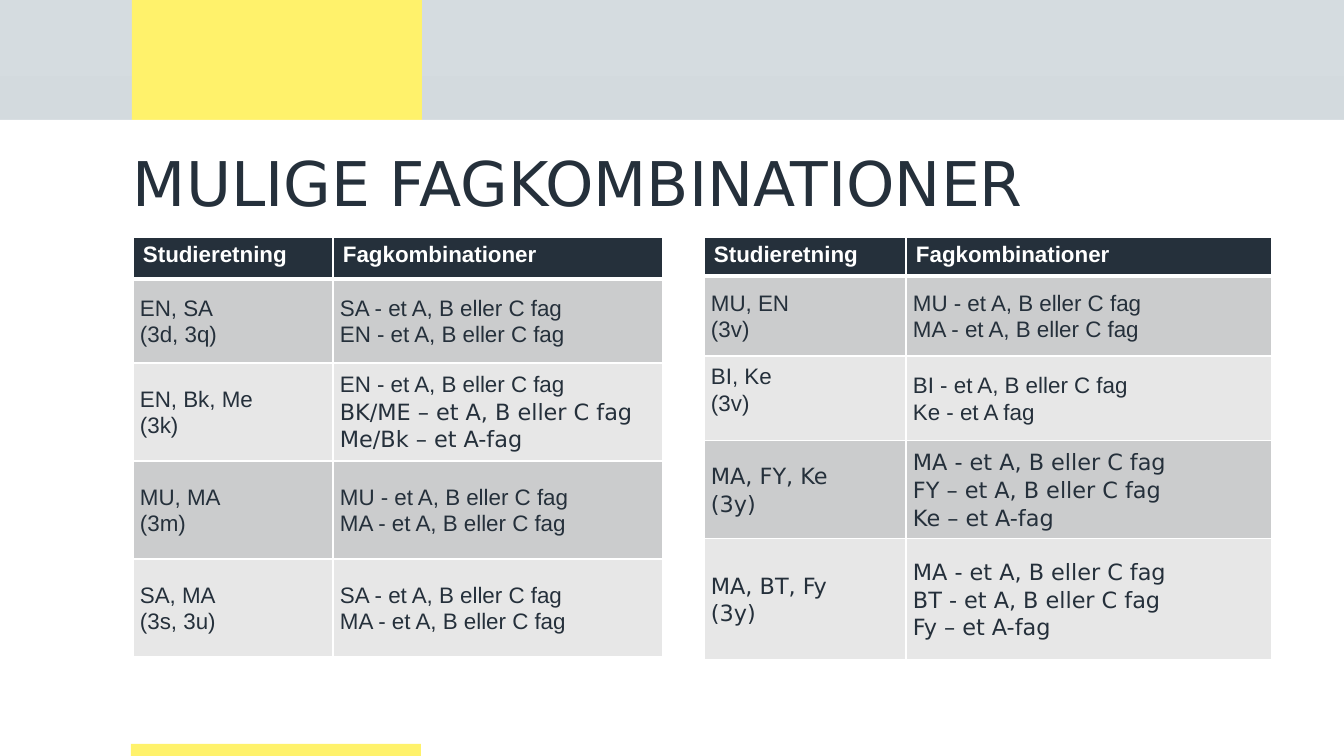
from dataclasses import dataclass

from lxml.etree import SubElement
from pptx import Presentation
from pptx.dml.color import RGBColor
from pptx.enum.shapes import MSO_SHAPE
from pptx.enum.text import MSO_ANCHOR
from pptx.oxml.ns import qn
from pptx.util import Pt

SCALE = 914400 / 100.8


def px(size):
    return round(size * SCALE)


@dataclass(frozen=True)
class Theme:
    dark: str = "25303B"
    white: str = "FFFFFF"
    yellow: str = "FFF26B"
    sky: tuple = ("D5DCE0", "CDD3D7")
    bands: tuple = ("CBCCCD", "E7E7E7")
    sans: str = "Arial"
    wide: str = "DejaVu Sans"
    title: int = 44
    body: int = 16


class Deck:
    def __init__(self, theme):
        self.theme = theme
        self.file = Presentation()
        self.file.slide_width, self.file.slide_height = px(1344), px(756)
        self.slide = self.file.slides.add_slide(self.file.slide_layouts[6])

    def back(self):
        fill = self.slide.background.fill
        fill.gradient()
        fill.gradient_angle = 270
        for stop, color, place in zip(fill.gradient_stops, self.theme.sky, (0, 0.5)):
            stop.color.rgb = RGBColor.from_string(color)
            stop.position = place

    def rect(self, box, color):
        shape = self.slide.shapes.add_shape(MSO_SHAPE.RECTANGLE, *map(px, box))
        shape.shadow.inherit = False
        shape.fill.solid()
        shape.fill.fore_color.rgb = RGBColor.from_string(color)
        shape.line.fill.background()

    def style(self, para, face, size, color, bold=False):
        for run in para.runs:
            run.font.name, run.font.size, run.font.bold = face, Pt(size), bold
            run.font.color.rgb = RGBColor.from_string(color)
        for gap in para._p.findall(qn("a:br")):
            SubElement(gap, qn("a:rPr"), sz=str(size * 100))

    def title(self, box, text):
        frame = self.slide.shapes.add_textbox(*map(px, box)).text_frame
        frame.word_wrap = True
        frame.vertical_anchor = MSO_ANCHOR.BOTTOM
        frame.margin_left = frame.margin_top = 0
        frame.margin_right = frame.margin_bottom = 0
        frame.text = text
        para = frame.paragraphs[0]
        para.line_spacing = 0.85
        self.style(para, self.theme.wide, self.theme.title, self.theme.dark)

    def edge(self, cell, side, width):
        props = cell._tc.get_or_add_tcPr()
        line = SubElement(props, qn(f"a:ln{side}"), w=str(Pt(width)))
        fill = SubElement(line, qn("a:solidFill"))
        SubElement(fill, qn("a:srgbClr"), val=self.theme.white)

    def cell(self, cell, text, faces, band, head, foot):
        """Fill one table cell; faces holds one font per paragraph."""
        theme = self.theme
        for side in "LRTB" if head else "LRB":
            self.edge(cell, side, 3 if head and side == "B" else 1)
        cell.fill.solid()
        cell.fill.fore_color.rgb = RGBColor.from_string(band)
        cell.margin_left = cell.margin_right = px(10 if head else 7)
        cell.margin_top = px(5 if head else 0)
        cell.margin_bottom = px(5 if head else foot)
        cell.vertical_anchor = MSO_ANCHOR.TOP if head else MSO_ANCHOR.MIDDLE
        cell.text_frame.text = text
        for para, face in zip(cell.text_frame.paragraphs, faces):
            if not head:
                para.line_spacing = 1.07
            self.style(para, face, theme.body, theme.white if head else theme.dark, head)

    def table(self, left, top, cols, rows):
        """Draw rows of (height, left text, right text, left fonts, right fonts, foot)."""
        theme = self.theme
        high = sum(row[0] for row in rows)
        box = map(px, (left, top, sum(cols), high))
        table = self.slide.shapes.add_table(len(rows), len(cols), *box).table
        table.horz_banding = False
        for col, width in zip(table.columns, cols):
            col.width = px(width)
        for i, (height, name, mix, face, faces, foot) in enumerate(rows):
            table.rows[i].height = px(height)
            band = theme.bands[(i - 1) % 2] if i else theme.dark
            self.cell(table.cell(i, 0), name, [face], band, i == 0, foot)
            self.cell(table.cell(i, 1), mix, faces, band, i == 0, 0)


def main():
    theme = Theme()
    sans, wide = theme.sans, theme.wide
    deck = Deck(theme)
    deck.back()
    deck.rect((132, 0, 290, 756), theme.yellow)
    deck.rect((0, 120, 1344, 636), theme.white)
    deck.rect((131, 744, 290, 12), theme.yellow)

    def head(height):
        return height, "Studieretning", "Fagkombinationer", sans, [sans], 0

    def pair(height, name, mix, foot=0):
        return height, name, mix, sans, [sans] * 2, foot

    def trio(height, name, mix):
        return height, name, mix, wide, [wide] * 3, 0

    deck.table(133, 237, (200, 330), [
        head(42),
        pair(84, "EN, SA\v(3d, 3q)", "SA - et A, B eller C fag\nEN - et A, B eller C fag"),
        (98, "EN, Bk, Me\v(3k)",
         "EN - et A, B eller C fag\nBK/ME – et A, B eller C fag\nMe/Bk – et A-fag",
         sans, [sans, wide, wide], 0),
        pair(98, "MU, MA\v(3m)", "MU - et A, B eller C fag\nMA - et A, B eller C fag"),
        pair(98, "SA, MA\v(3s, 3u)", "SA - et A, B eller C fag\nMA - et A, B eller C fag"),
    ])
    deck.title((133, 132, 1080, 87), "MULIGE FAGKOMBINATIONER")
    deck.table(704, 237, (202, 366), [
        head(39),
        pair(80, "MU, EN\v(3v)", "MU - et A, B eller C fag\nMA - et A, B eller C fag"),
        pair(85, "BI, Ke\v(3v)", "BI - et A, B eller C fag\nKe - et A fag", 18),
        trio(98, "MA, FY, Ke\v(3y)",
             "MA - et A, B eller C fag\nFY – et A, B eller C fag\nKe – et A-fag"),
        trio(121, "MA, BT, Fy\v(3y)",
             "MA - et A, B eller C fag\nBT - et A, B eller C fag\nFy – et A-fag"),
    ])
    deck.file.save("out.pptx")


if __name__ == "__main__":
    main()
